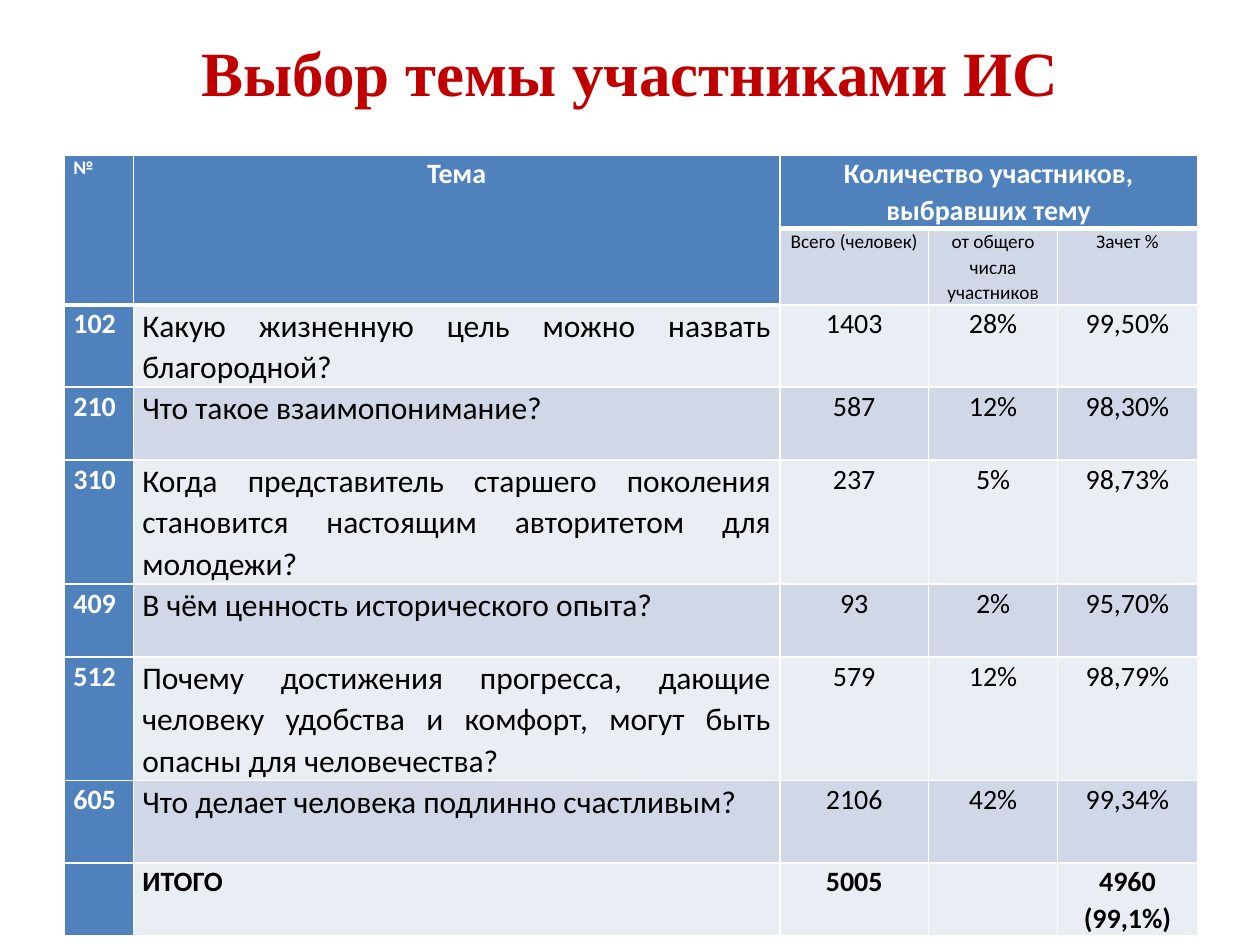
from lxml import etree
from pptx import Presentation
from pptx import util as u
from pptx.dml.color import RGBColor
from pptx.enum import text
from pptx.oxml.ns import qn

WHITE = RGBColor(0xFF, 0xFF, 0xFF)
BLACK = RGBColor(0x00, 0x00, 0x00)
RED = RGBColor(0xC0, 0x00, 0x00)
BLUE = RGBColor(0x4F, 0x81, 0xBD)
BAND_DARK = RGBColor(0xD0, 0xD8, 0xE8)
BAND_LIGHT = RGBColor(0xE9, 0xED, 0xF4)

CENTER = text.PP_ALIGN.CENTER
JUSTIFY = text.PP_ALIGN.JUSTIFY
LEFT = text.PP_ALIGN.LEFT

COLUMN_WIDTHS = [1.39, 13.03, 3.0, 2.6, 2.82]
ROW_HEIGHTS = [1.49, 1.53, 1.65, 1.47, 2.5, 1.47, 2.48, 1.66, 1.47]
ROWS = [
    ["№", "Тема", "Количество участников, выбравших тему", "", ""],
    ["", "", "Всего (человек)", "от общего числа участников", "Зачет %"],
    ["102", "Какую жизненную цель можно назвать благородной?", "1403", "28%", "99,50%"],
    ["210", "Что такое взаимопонимание?", "587", "12%", "98,30%"],
    ["310", "Когда представитель старшего поколения становится настоящим авторитетом для молодежи?",
     "237", "5%", "98,73%"],
    ["409", "В чём ценность исторического опыта?", "93", "2%", "95,70%"],
    ["512", "Почему достижения прогресса, дающие человеку удобства и комфорт, могут быть опасны для человечества?",
     "579", "12%", "98,79%"],
    ["605", "Что делает человека подлинно счастливым?", "2106", "42%", "99,34%"],
    ["", "ИТОГО", "5005", "", "4960 (99,1%)"],
]
TOTAL_ROW = len(ROWS) - 1


def add_text(paragraph, content, size, font_name, color, bold, alignment):
    paragraph.alignment = alignment
    run = paragraph.add_run()
    run.text = content
    run.font.size = u.Pt(size)
    run.font.name = font_name
    run.font.color.rgb = color
    run.font.bold = bold


def set_border(cell, side, width):
    properties = cell._tc.get_or_add_tcPr()
    line = etree.SubElement(properties, qn(f"a:ln{side}"), w=str(u.Pt(width)))
    fill = etree.SubElement(line, qn("a:solidFill"))
    etree.SubElement(fill, qn("a:srgbClr"), val=str(WHITE))


presentation = Presentation()
presentation.slide_width = u.Cm(25.4)
presentation.slide_height = u.Cm(19.05)
slide = presentation.slides.add_slide(presentation.slide_layouts[6])

table = slide.shapes.add_table(
    len(ROWS), len(COLUMN_WIDTHS), u.Cm(1.3), u.Cm(3.12),
    u.Cm(sum(COLUMN_WIDTHS)), u.Cm(sum(ROW_HEIGHTS))).table
for column, width in zip(table.columns, COLUMN_WIDTHS):
    column.width = u.Cm(width)
for row, height in zip(table.rows, ROW_HEIGHTS):
    row.height = u.Cm(height)

table.cell(0, 0).merge(table.cell(1, 0))
table.cell(0, 1).merge(table.cell(1, 1))
table.cell(0, 2).merge(table.cell(0, 4))

for row_index, values in enumerate(ROWS):
    for column_index, value in enumerate(values):
        cell = table.cell(row_index, column_index)
        in_header = row_index == 0 or (row_index == 1 and column_index < 2)
        below_header = row_index == (2 if column_index < 2 else 1)
        header_end = row_index == (1 if column_index < 2 else 0)
        thick_bottom = header_end or cell.is_merge_origin
        for side, thick in (("L", False), ("R", False), ("T", below_header), ("B", thick_bottom)):
            set_border(cell, side, 3 if thick else 1)

        on_blue = in_header or column_index == 0
        band = BAND_DARK if row_index % 2 else BAND_LIGHT
        cell.fill.solid()
        cell.fill.fore_color.rgb = BLUE if on_blue else band
        cell.margin_left = cell.margin_right = u.Cm(0.18)
        cell.margin_top = cell.margin_bottom = 0
        if not value:
            continue

        is_topic = column_index == 1 and 1 < row_index < TOTAL_ROW
        small = row_index == 1 or value == "№"
        size = 11 if small else 18 if is_topic else 16
        if is_topic or column_index == 0:
            alignment = JUSTIFY
        elif column_index == 1 and row_index == TOTAL_ROW:
            alignment = LEFT
        else:
            alignment = CENTER
        paragraph = cell.text_frame.paragraphs[0]
        paragraph.line_spacing = 1.07
        add_text(paragraph, value, size, "Calibri", WHITE if on_blue else BLACK,
                 on_blue or row_index == TOTAL_ROW, alignment)

title = slide.shapes.add_textbox(u.Cm(1.27), u.Cm(0.76), u.Cm(22.86), u.Cm(1.37))
title.text_frame.word_wrap = True
title.text_frame.vertical_anchor = text.MSO_ANCHOR.MIDDLE
add_text(title.text_frame.paragraphs[0], "Выбор темы участниками ИС", 36,
         "Times New Roman", RED, True, CENTER)

presentation.save("out.pptx")
